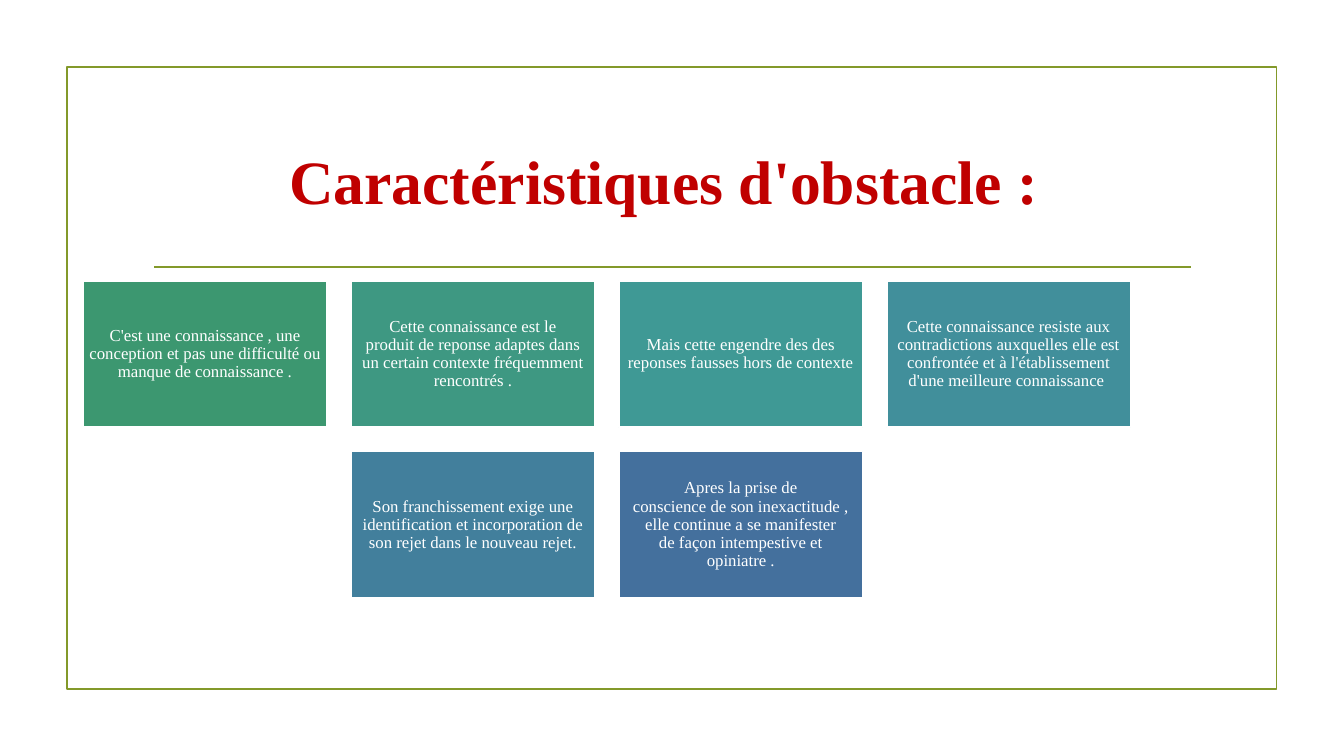
from dataclasses import dataclass

from pptx import Presentation
from pptx.dml.color import RGBColor
from pptx.enum.shapes import MSO_CONNECTOR, MSO_SHAPE
from pptx.enum.text import MSO_ANCHOR, MSO_AUTO_SIZE, PP_ALIGN
from pptx.oxml.ns import qn
from pptx.util import Cm, Pt


@dataclass(frozen=True)
class Theme:
    font: str = "Times New Roman"
    title_size: int = 44
    card_size: int = 12
    line_width: float = 1.25
    title: str = "C00000"
    accent: str = "83992A"
    white: str = "FFFFFF"
    cards: tuple = ("3C9770", "3E9882", "3F9995", "418F9B", "427F9C", "44709D")


THEME = Theme()

# A tilde in the texts stands for a space that does not break.
HARD_SPACE = chr(160)
TITLE = "Caractéristiques d'obstacle :~"
CARD_TEXTS = (
    "C'est une connaissance , une conception et pas une difficulté ou manque de connaissance .",
    "Cette~connaissance est le produit~de reponse adaptes dans "
    "un~certain~contexte~fréquemment rencontrés .",
    "Mais cette~engendre des~des reponses fausses~hors de contexte",
    "Cette connaissance resiste aux contradictions~auxquelles~elle est "
    "confrontée et à l'établissement d'une~meilleure connaissance~",
    "Son franchissement exige~une identification et incorporation~de "
    "son rejet dans le nouveau rejet.",
    "Apres la prise~de conscience~de~son inexactitude , elle continue~a "
    "se manifester de~façon~intempestive et opiniatre .",
)

COLUMNS = 4
CARD_LEFT, CARD_TOP = 2.1, 7.08
CARD_WIDTH, CARD_HEIGHT = 6.14, 3.69
CARD_GAP = 0.61


def write_text(frame, text, *, size, color, bold=False, spacing=None):
    frame.word_wrap = True
    frame.auto_size = MSO_AUTO_SIZE.NONE
    frame.vertical_anchor = MSO_ANCHOR.MIDDLE
    para = frame.paragraphs[0]
    para.alignment = PP_ALIGN.CENTER
    para.line_spacing = spacing
    span = para.add_run()
    span.text = text.replace("~", HARD_SPACE)
    span.font.name = THEME.font
    span.font.size = Pt(size)
    span.font.bold = bold
    span.font.color.rgb = RGBColor.from_string(color)


def style_line(line, color):
    line.color.rgb = RGBColor.from_string(color)
    line.width = Pt(THEME.line_width)


def add_box(page, left, top, width, height, *, line, fill=None):
    box = page.shapes.add_shape(
        MSO_SHAPE.RECTANGLE, Cm(left), Cm(top), Cm(width), Cm(height))
    box.shadow.inherit = False
    if fill:
        box.fill.solid()
        box.fill.fore_color.rgb = RGBColor.from_string(fill)
    else:
        box.fill.background()
    style_line(box.line, line)
    return box


def add_rule(page, left, right, top):
    rule = page.shapes.add_connector(
        MSO_CONNECTOR.STRAIGHT, Cm(left), Cm(top), Cm(right), Cm(top))
    style_line(rule.line, THEME.accent)
    properties = rule._element.spPr
    properties.append(properties.makeelement(qn("a:effectLst"), {}))


def add_title(page, text):
    title = page.shapes.title
    title.left, title.top = Cm(3.6), Cm(2.72)
    title.width, title.height = Cm(26.67), Cm(3.63)
    write_text(title.text_frame, text, size=THEME.title_size,
               color=THEME.title, bold=True)


def add_card(page, left, top, text, fill):
    card = add_box(page, left, top, CARD_WIDTH, CARD_HEIGHT,
                   line=THEME.white, fill=fill)
    frame = card.text_frame
    frame.margin_left = frame.margin_right = Cm(0.13)
    frame.margin_top = frame.margin_bottom = Cm(0.13)
    write_text(frame, text, size=THEME.card_size, color=THEME.white, spacing=0.9)


def add_cards(page):
    """Lay the cards out in rows, centring a row that is not full."""
    for index, (text, fill) in enumerate(zip(CARD_TEXTS, THEME.cards)):
        row, column = divmod(index, COLUMNS)
        in_row = min(COLUMNS, len(CARD_TEXTS) - row * COLUMNS)
        column += (COLUMNS - in_row) / 2
        left = CARD_LEFT + column * (CARD_WIDTH + CARD_GAP)
        top = CARD_TOP + row * (CARD_HEIGHT + CARD_GAP)
        add_card(page, left, top, text, fill)


def main():
    deck = Presentation()
    deck.slide_width, deck.slide_height = Cm(33.87), Cm(19.05)
    page = deck.slides.add_slide(deck.slide_layouts.get_by_name("Title Only"))
    add_box(page, 1.69, 1.69, 30.48, 15.67, line=THEME.accent)
    add_rule(page, 3.89, 30.01, 6.73)
    add_title(page, TITLE)
    add_cards(page)
    deck.save("out.pptx")


if __name__ == "__main__":
    main()
